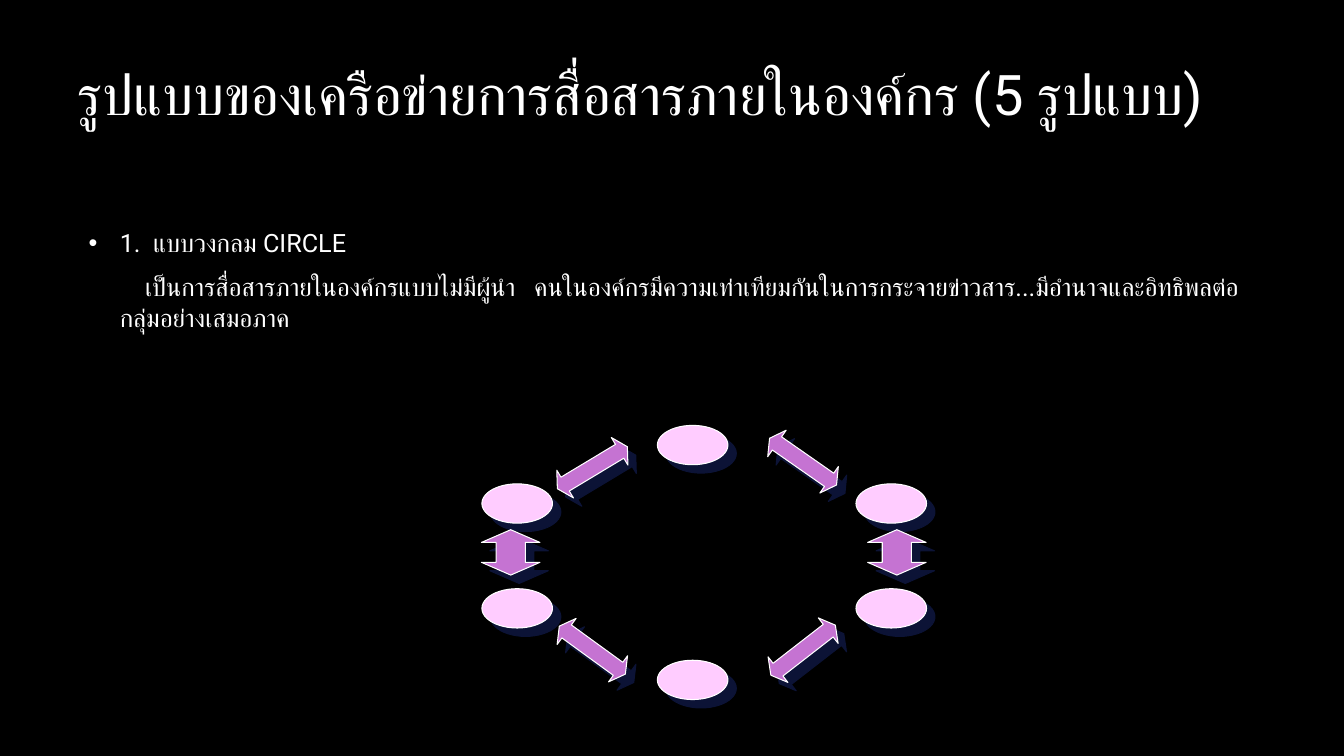
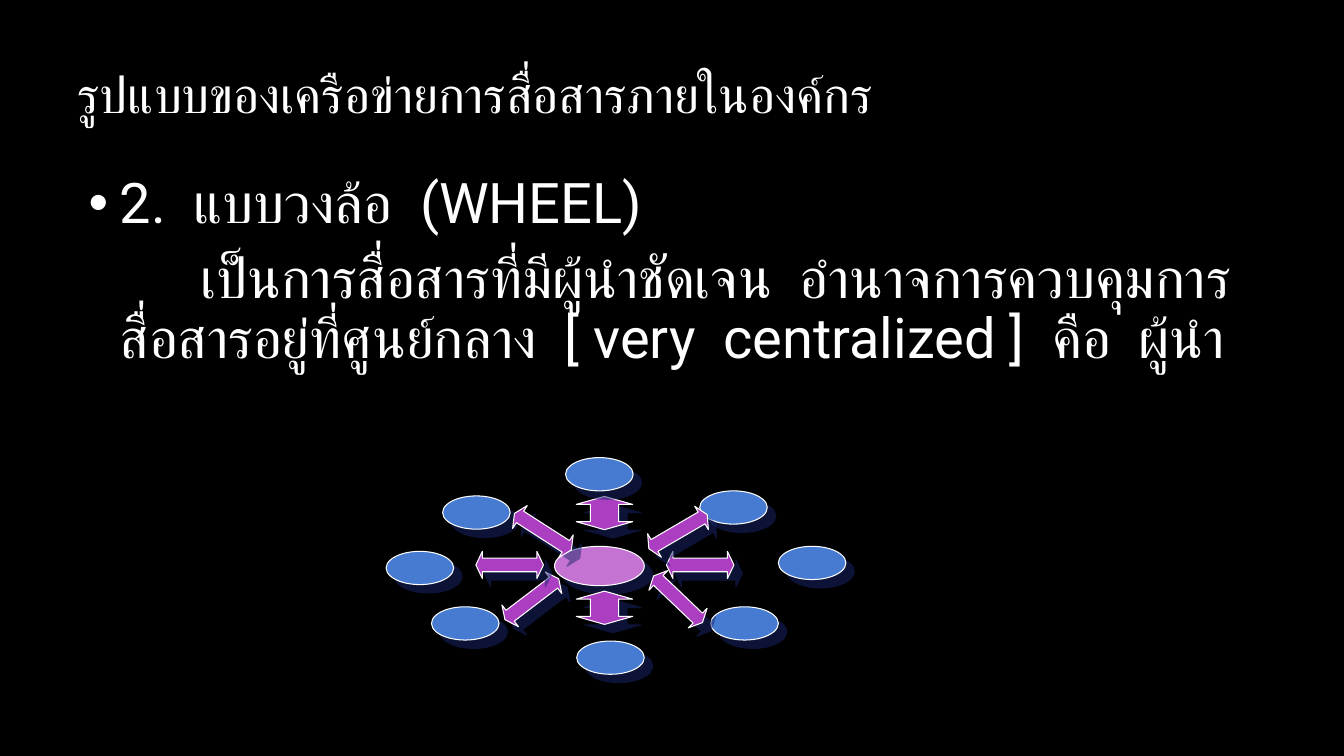
from lxml.etree import SubElement as Sub
from pptx import Presentation
from pptx.dml.color import RGBColor as Rgb
from pptx.enum.shapes import MSO_SHAPE as Kind
from pptx.enum.text import MSO_ANCHOR as Anchor, MSO_AUTO_SIZE as Fit, PP_ALIGN as Align
from pptx.oxml.ns import qn
from pptx.util import Pt

PX = 9144
WIDE, HIGH = 1333, 750
BLACK = Rgb(0x00, 0x00, 0x00)
WHITE = Rgb(0xFF, 0xFF, 0xFF)
PINK = Rgb(0xFF, 0xCC, 0xFF)
LILAC = Rgb(0xC5, 0x73, 0xD2)
PURPLE = Rgb(0xAC, 0x3E, 0xC1)
BLUE = Rgb(0x47, 0x7B, 0xD1)
NAVY = Rgb(0x18, 0x27, 0x6C)

HANG = 31
TITLE = (67, 30, 1200, 125)
OVAL, ARROW = Kind.OVAL, Kind.LEFT_RIGHT_ARROW

STYLES = {
    "peer": (OVAL, 70, 39, PINK, None),
    "post": (ARROW, 45, 58, LILAC, 0.28),
    "link": (ARROW, 81, 32, LILAC, 0.28),
    "hub": (OVAL, 89, 39, LILAC, None),
    "node": (OVAL, 67, 33, BLUE, None),
    "stem": (ARROW, 33, 56, PURPLE, 0.24),
    "spoke": (ARROW, 67, 27, PURPLE, 0.24),
}

SLIDES = [
    {
        "title": ("รูปแบบของเครือข่ายการสื่อสารภายในองค์กร (5 รูปแบบ)", "Roboto", 40),
        "box": (78, 158, 1195, 239),
        "size": 18, "lead": 1.0, "first": 25,
        "head": "1.  แบบวงกลม CIRCLE",
        "text": "เป็นการสื่อสารภายในองค์กรแบบไม่มีผู้นำ   คนในองค์กรมีความเท่าเทียมกันในการกระจายข่าวสาร...มีอำนาจและอิทธิพลต่อกลุ่มอย่างเสมอภาค",
        "parts": [
            ("peer", [(x, y, 0) for x in (478, 849) for y in (480, 584)]),
            ("peer", [(652, y, 0) for y in (422, 655)]),
            ("post", [(x, 519, 90) for x in (484, 867)]),
            ("link", [(756, 629, 142.2), (547, 629, 36), (756, 442, 34.9), (547, 448, 149)]),
        ],
    },
    {
        "title": ("รูปแบบของเครือข่ายการสื่อสารภายในองค์กร", "Calibri", 36),
        "box": (78, 167, 1195, 208),
        "size": 40, "lead": 0.9, "first": 80,
        "head": "2.  แบบวงล้อ  (WHEEL)",
        "text": "เป็นการสื่อสารที่มีผู้นำชัดเจน  อำนาจการควบคุมการสื่อสารอยู่ที่ศูนย์กลาง  [ very  centralized ]  คือ  ผู้นำ",
        "parts": [
            ("hub", [(550, 542, 0)]),
            ("stem", [(583, 481, 90)]),
            ("node", [(561, 454, 0), (439, 492, 0), (428, 602, 0), (705, 602, 0),
                      (694, 487, 0), (772, 542, 0), (383, 547, 0), (572, 636, 0)]),
            ("spoke", [(494, 581, 322.7), (505, 514, 32.7)]),
            ("stem", [(583, 575, 90)]),
            ("spoke", [(472, 547, 0), (661, 547, 0), (639, 581, 43.7), (639, 514, 329.7)]),
        ],
    },
]


def scale(box):
    return [n * PX for n in box]


def add_run(para, text, face, size):
    run = para.add_run()
    run.text = text
    run.font.name, run.font.size = face, Pt(size)
    run.font.color.rgb = WHITE


def set_title(slide, text, face, size):
    shape = slide.shapes.title
    shape.left, shape.top, shape.width, shape.height = scale(TITLE)
    frame = shape.text_frame
    frame.auto_size, frame.word_wrap = Fit.NONE, True
    frame.vertical_anchor = Anchor.MIDDLE
    para = frame.paragraphs[0]
    para.alignment = Align.LEFT
    add_run(para, text, face, size)


def add_body(slide, data):
    frame = slide.shapes.add_textbox(*scale(data["box"])).text_frame
    frame.word_wrap, frame.vertical_anchor = True, Anchor.MIDDLE
    rows = [(data["head"], -HANG, True), (data["text"], data["first"], False)]
    for i, (text, dent, dot) in enumerate(rows):
        para = frame.add_paragraph() if i else frame.paragraphs[0]
        para.line_spacing, para.space_after = data["lead"], Pt(10)
        props = para._p.get_or_add_pPr()
        props.set("marL", str(HANG * PX))
        props.set("indent", str(dent * PX))
        if dot:
            Sub(Sub(props, qn("a:buClr")), qn("a:srgbClr"), val=str(WHITE))
            Sub(props, qn("a:buFont"), typeface="Arial")
            Sub(props, qn("a:buChar"), char="•")
        else:
            Sub(props, qn("a:buNone"))
        add_run(para, text, "Roboto", data["size"])


def add_shade(shape):
    shape.shadow.inherit = False
    fx = shape._element.spPr.find(qn("a:effectLst"))
    cast = Sub(fx, qn("a:outerShdw"), dist=str(Pt(8.5)), dir="2700000",
               algn="ctr", rotWithShape="0")
    tint = Sub(cast, qn("a:srgbClr"), val=str(NAVY))
    Sub(tint, qn("a:alpha"), val="50000")


def add_part(group, style, x, y, turn):
    kind, wide, high, fill, head = STYLES[style]
    shape = group.shapes.add_shape(kind, *scale((x, y, wide, high)))
    shape.rotation = turn
    if head:
        shape.adjustments[0], shape.adjustments[1] = 0.5, head
    shape.fill.solid()
    shape.fill.fore_color.rgb = fill
    shape.line.color.rgb = WHITE
    shape.line.width = Pt(0.75)
    add_shade(shape)


def main():
    deck = Presentation()
    deck.slide_width, deck.slide_height = scale((WIDE, HIGH))
    back = deck.slide_master.background.fill
    back.solid()
    back.fore_color.rgb = BLACK
    for data in SLIDES:
        slide = deck.slides.add_slide(deck.slide_layouts[5])
        set_title(slide, *data["title"])
        add_body(slide, data)
        group = slide.shapes.add_group_shape()
        for style, spots in data["parts"]:
            for spot in spots:
                add_part(group, style, *spot)
    deck.save("out.pptx")


if __name__ == "__main__":
    main()
